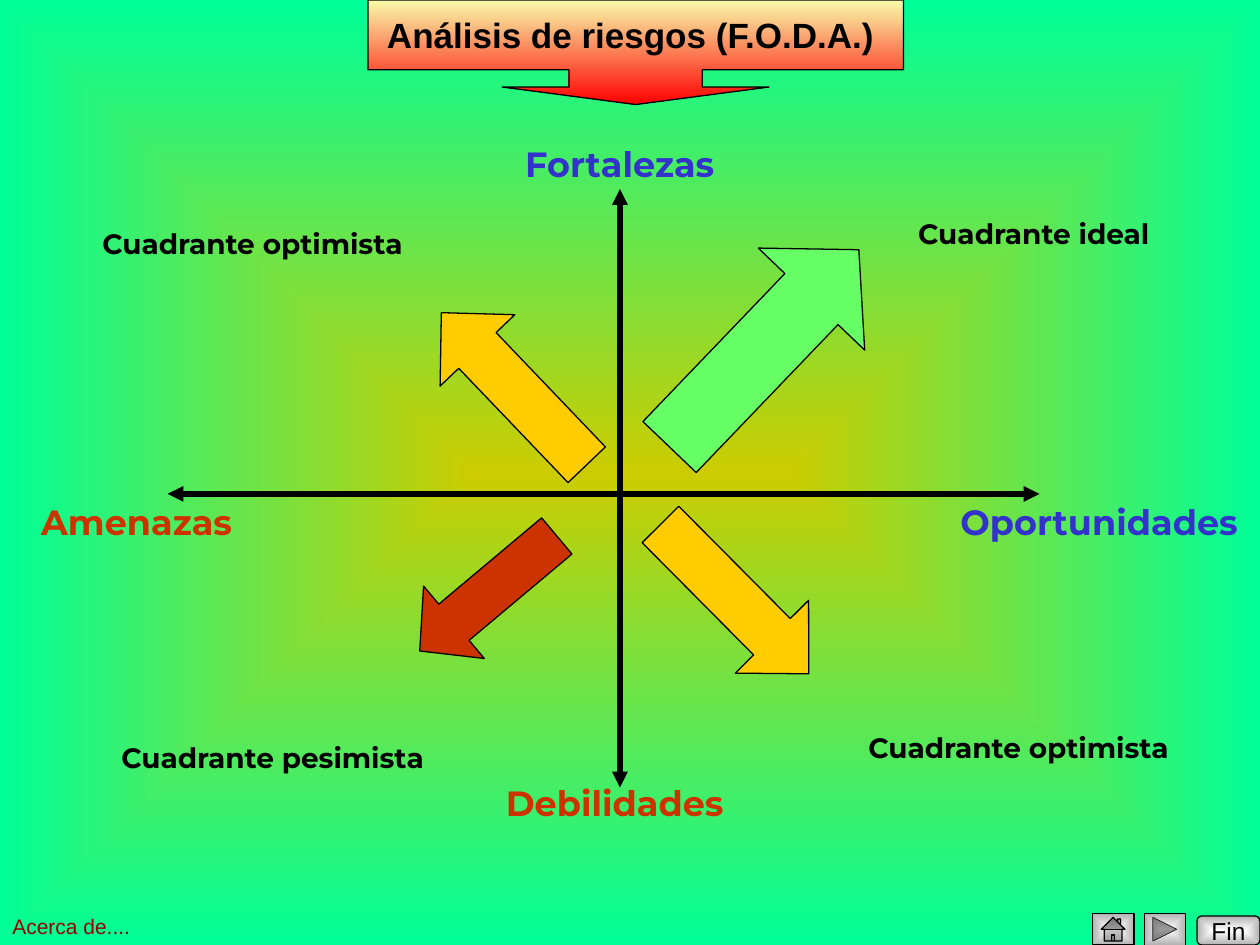
"""Build the SWOT (F.O.D.A.) risk analysis slide."""
import lxml.etree
import pptx
import pptx.dml.color
import pptx.enum.shapes
import pptx.enum.text
import pptx.oxml.ns
import pptx.util

Inches = pptx.util.Inches
Pt = pptx.util.Pt
RGBColor = pptx.dml.color.RGBColor
Shape = pptx.enum.shapes.MSO_SHAPE
Align = pptx.enum.text.PP_ALIGN
qn = pptx.oxml.ns.qn

BLACK = RGBColor(0x00, 0x00, 0x00)
WHITE = RGBColor(0xFF, 0xFF, 0xFF)
GRAY = RGBColor(0xB2, 0xB2, 0xB2)
OLIVE = RGBColor(0xCC, 0xCC, 0x00)
MINT = RGBColor(0x00, 0xFF, 0x99)
CREAM = RGBColor(0xF8, 0xFC, 0xAA)
RED = RGBColor(0xFF, 0x00, 0x00)
BLUE = RGBColor(0x33, 0x33, 0xCC)
BRICK = RGBColor(0xCC, 0x33, 0x00)
MAROON = RGBColor(0x99, 0x00, 0x00)
GREEN = RGBColor(0x66, 0xFF, 0x66)
AMBER = RGBColor(0xFF, 0xCC, 0x00)


class SwotSlide:
    """Holds the style and the current slide, with one method per element kind."""

    heading_font = "Montserrat"
    plain_font = "Arial"

    def __init__(self, page):
        self.page = page
        self.shapes = page.shapes

    def start_group(self):
        self.shapes = self.page.shapes.add_group_shape().shapes

    def gradient(self, fill, owner, colors, kind=None):
        fill.gradient()
        for stop, color in zip(fill.gradient_stops, colors):
            stop.color.rgb = color
        if kind is None:
            fill.gradient_angle = 270
            return
        linear = next(owner.iter(qn("a:lin")))
        radial = lxml.etree.Element(qn("a:path"), path=kind)
        middle = dict.fromkeys("ltrb", "50000")
        lxml.etree.SubElement(radial, qn("a:fillToRect"), middle)
        linear.getparent().replace(linear, radial)

    def background(self, colors):
        self.gradient(self.page.background.fill, self.page.element, colors, "shape")

    def set_text(self, box, text, size, color, font, bold=False, align=Align.CENTER):
        box.text_frame.text = text
        paragraph = box.text_frame.paragraphs[0]
        paragraph.alignment = align
        for span in paragraph.runs:
            span.font.name = font
            span.font.size = Pt(size)
            span.font.bold = bold
            span.font.color.rgb = color

    def shape(self, kind, place, width=0.75, adjustments=()):
        box = self.shapes.add_shape(kind, *map(Inches, place))
        box.shadow.inherit = False
        box.line.color.rgb = BLACK
        box.line.width = Pt(width)
        for index, value in enumerate(adjustments):
            box.adjustments[index] = value
        return box

    def caption(self, box, text, size, bold=False):
        box.text_frame.word_wrap = False
        box.text_frame.vertical_anchor = pptx.enum.text.MSO_ANCHOR.MIDDLE
        self.set_text(box, text, size, BLACK, self.plain_font, bold)

    def button(self, kind, place, shade, width=0.75):
        box = self.shape(kind, place, width)
        self.gradient(box.fill, box.element, (WHITE, GRAY), shade)
        return box

    def arrow(self, kind, place, rotation, head, color):
        box = self.shape(kind, place, adjustments=(0.5, head))
        box.rotation = rotation
        box.fill.solid()
        box.fill.fore_color.rgb = color

    def label(self, text, place, size, color, font=heading_font, bold=True,
              align=Align.CENTER, right=0.1):
        box = self.shapes.add_textbox(*map(Inches, place))
        box.text_frame.word_wrap = True
        box.text_frame.margin_right = Inches(right)
        self.set_text(box, text, size, color, font, bold, align)

    def axis(self, *ends):
        line = self.shapes.add_connector(
            pptx.enum.shapes.MSO_CONNECTOR.STRAIGHT, *map(Inches, ends))
        line.line.color.rgb = BLACK
        line.line.width = Pt(3)
        outline = line.element.spPr.find(qn("a:ln"))
        for end in ("a:headEnd", "a:tailEnd"):
            lxml.etree.SubElement(outline, qn(end), type="triangle")
        lxml.etree.SubElement(line.element.spPr, qn("a:effectLst"))


def main():
    deck = pptx.Presentation()
    deck.slide_width, deck.slide_height = Inches(10), Inches(7.5)
    swot = SwotSlide(deck.slides.add_slide(deck.slide_layouts[6]))
    swot.background((OLIVE, MINT))

    title = swot.shape(Shape.DOWN_ARROW_CALLOUT, (2.92, 0, 4.25, 0.83),
                       adjustments=(1.275, 1.275, 0.167, 0.667))
    swot.gradient(title.fill, title.element, (CREAM, RED))
    swot.caption(title, "Análisis de riesgos (F.O.D.A.)", 20, bold=True)
    title.text_frame.margin_right = Inches(0.18)

    finish = swot.button(Shape.ROUNDED_RECTANGLE, (9.5, 7.27, 0.5, 0.23), "shape")
    swot.caption(finish, "Fin", 14)
    swot.button(Shape.ACTION_BUTTON_FORWARD_OR_NEXT, (9.08, 7.25, 0.33, 0.25), "rect", 0.25)
    swot.button(Shape.ACTION_BUTTON_HOME, (8.67, 7.25, 0.33, 0.25), "rect")
    swot.label("Acerca de....", (0, 7.2, 1.67, 0.3), 12, MAROON,
               swot.plain_font, bold=False, align=Align.LEFT)

    swot.start_group()
    swot.axis(4.92, 1.5, 4.92, 6.25)
    swot.axis(1.33, 3.92, 8.25, 3.92)
    for text, left, top, width, color, right in (
        ("Fortalezas", 3.83, 1.08, 2.25, BLUE, 0.17),
        ("Oportunidades", 7.5, 3.92, 2.5, BLUE, 0.15),
        ("Debilidades", 3.83, 6.15, 2.25, BRICK, 0.25),
        ("Amenazas", 0, 3.92, 2.25, BRICK, 0.18),
    ):
        swot.label(text, (left, top, width, 0.43), 20, color, right=right)

    up, down = Shape.UP_ARROW, Shape.DOWN_ARROW
    for kind, place, rotation, head, color, name, left, top, width in (
        (up, (5.48, 1.68, 1.17, 2.17), 43.8, 0.464, GREEN, "ideal", 7.08, 1.67, 2.25),
        (down, (3.5, 4, 0.75, 1.42), 50, 0.472, BRICK, "pesimista", 0.58, 5.83, 3.17),
        (up, (3.67, 2.25, 0.82, 1.67), 316.3, 0.506, AMBER, "optimista", 0.42, 1.75, 3.17),
        (up, (5.42, 3.92, 0.82, 1.67), 135.2, 0.506, AMBER, "optimista", 6.5, 5.75, 3.17),
    ):
        swot.start_group()
        swot.arrow(kind, place, rotation, head, color)
        swot.label(f"Cuadrante {name}", (left, top, width, 0.37), 16, BLACK)

    deck.save("out.pptx")


if __name__ == "__main__":
    main()
